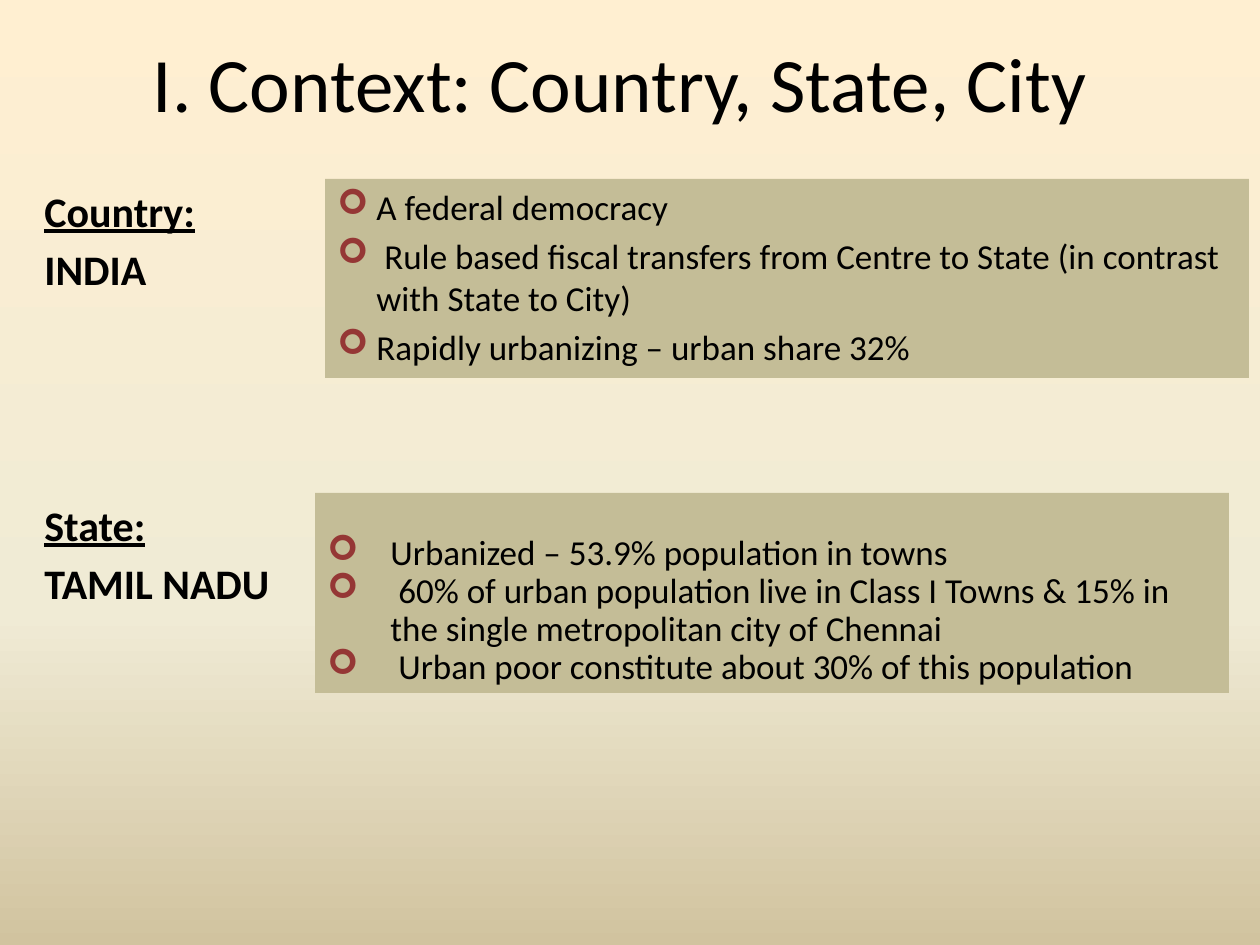
from copy import deepcopy

from lxml.etree import SubElement
from pptx import Presentation
from pptx.dml.color import RGBColor
from pptx.enum.shapes import MSO_SHAPE as Shape
from pptx.enum.text import MSO_ANCHOR as Anchor, PP_ALIGN as Align
from pptx.oxml.ns import qn
from pptx.util import Pt

PX = 914400 / 126
BLACK = RGBColor(0x00, 0x00, 0x00)
KHAKI = RGBColor(0xC4, 0xBD, 0x97)
MAROON = RGBColor(0x95, 0x37, 0x35)
BACKDROP = [
    (0, RGBColor(0xFF, 0xEF, 0xD1)),
    (0.65, RGBColor(0xF0, 0xEB, 0xD5)),
    (1, RGBColor(0xD1, 0xC3, 0x9F)),
]


def px(length):
    return round(length * PX)


def paint_background(slide):
    fill = slide.background.fill
    fill.gradient()
    fill.gradient_angle = 270
    stop_list = slide.background._cSld.find(".//" + qn("a:gsLst"))
    stop_list.append(deepcopy(stop_list[-1]))
    for stop, (position, color) in zip(fill.gradient_stops, BACKDROP):
        stop.position = position
        stop.color.rgb = color


def set_bullet(paragraph, indent):
    props = paragraph._p.get_or_add_pPr()
    props.set("marL", str(px(indent)))
    props.set("indent", str(-px(indent)))
    color = SubElement(props, qn("a:buClr"))
    SubElement(color, qn("a:srgbClr"), val=str(MAROON))
    SubElement(props, qn("a:buFont"), typeface="Wingdings")
    SubElement(props, qn("a:buChar"), char="➢")


def style_font(paragraph, size, bold=False, underline=False):
    font = paragraph.font
    font.name = "Calibri"
    font.size = Pt(size)
    font.bold = bold
    font.underline = underline
    font.color.rgb = BLACK


def add_lines(frame, lines):
    frame.word_wrap = True
    frame.text = "\n".join(lines)
    return frame.paragraphs


def add_title(slide, box, title):
    frame = slide.shapes.add_textbox(*map(px, box)).text_frame
    frame.vertical_anchor = Anchor.MIDDLE
    heading = add_lines(frame, [title])[0]
    heading.alignment = Align.CENTER
    style_font(heading, 44)


def add_place(slide, box, level, name):
    frame = slide.shapes.add_textbox(*map(px, box)).text_frame
    level_line, name_line = add_lines(frame, [level, name])
    name_line.space_before = Pt(4.8)
    style_font(level_line, 24, bold=True, underline=True)
    style_font(name_line, 24, bold=True)


def add_facts(slide, box, facts, indent, anchor, gap=0, spacing=1.0):
    panel = slide.shapes.add_shape(Shape.RECTANGLE, *map(px, box))
    panel.shadow.inherit = False
    panel.fill.solid()
    panel.fill.fore_color.rgb = KHAKI
    panel.line.fill.background()
    panel.text_frame.vertical_anchor = anchor
    for fact in add_lines(panel.text_frame, facts):
        fact.alignment = Align.LEFT
        fact.line_spacing = spacing
        fact.space_before = Pt(gap)
        set_bullet(fact, indent)
        style_font(fact, 20)


def main():
    deck = Presentation()
    deck.slide_width, deck.slide_height = px(1260), px(945)
    slide = deck.slides.add_slide(deck.slide_layouts[6])
    paint_background(slide)
    add_title(slide, (53, 0, 1134, 164), "I. Context: Country, State, City")
    add_place(slide, (32, 179, 280, 124), "Country:", "INDIA")
    add_facts(
        slide,
        (325, 179, 924, 199),
        [
            "A federal democracy",
            " Rule based fiscal transfers from Centre to State (in contrast with State to City)",
            "Rapidly urbanizing – urban share 32%",
        ],
        indent=39,
        anchor=Anchor.TOP,
        gap=4,
    )
    add_place(slide, (32, 493, 280, 124), "State:", "TAMIL NADU")
    add_facts(
        slide,
        (315, 493, 914, 200),
        [
            "Urbanized – 53.9% population in towns",
            " 60% of urban population live in Class I Towns & 15% in the single metropolitan city of Chennai",
            " Urban poor constitute about 30% of this population",
        ],
        indent=63,
        anchor=Anchor.BOTTOM,
        spacing=0.9,
    )
    deck.save("out.pptx")


if __name__ == "__main__":
    main()
